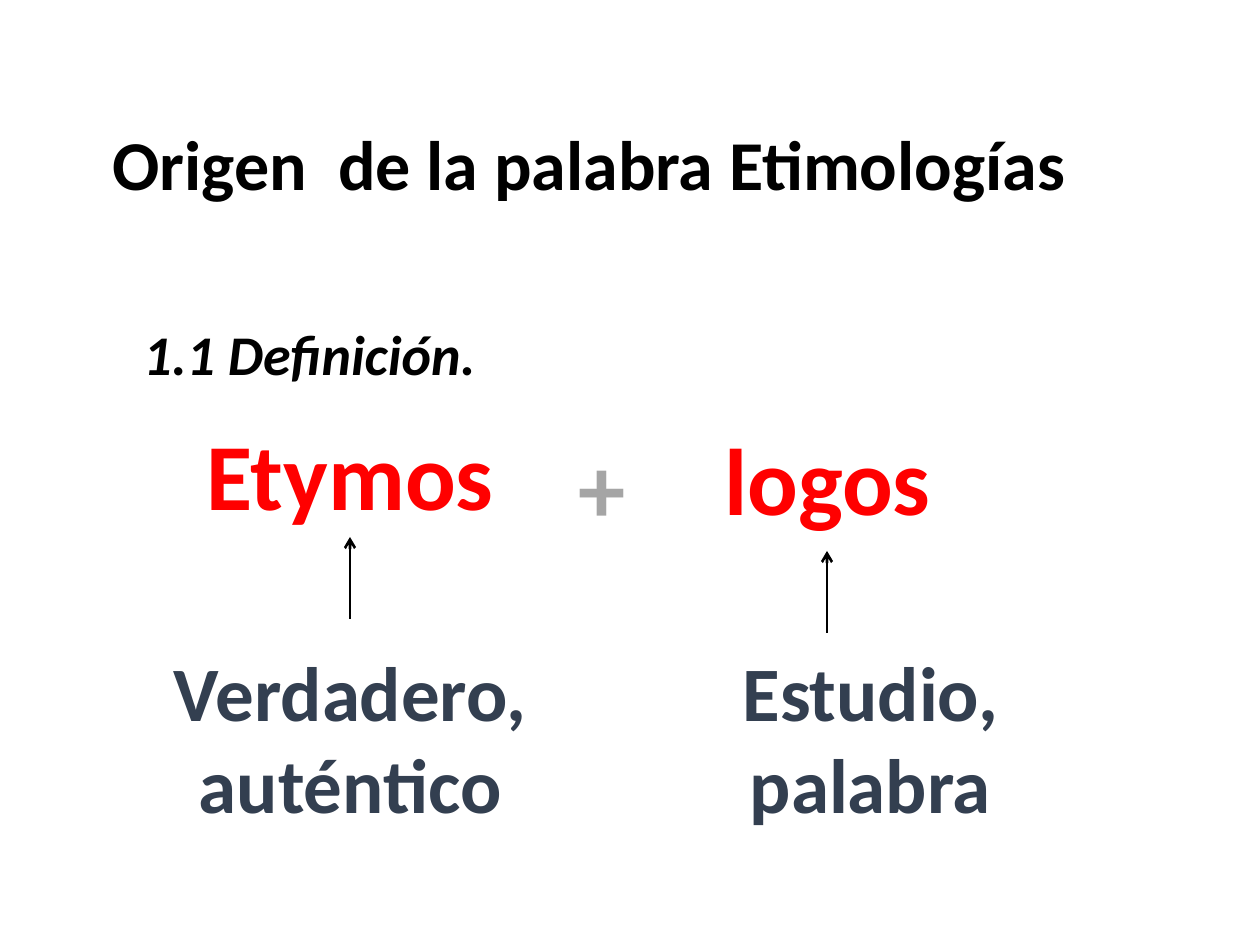
from lxml import etree
from pptx import Presentation
from pptx.dml.color import RGBColor
from pptx.enum.shapes import MSO_CONNECTOR
from pptx.enum.text import MSO_ANCHOR, PP_ALIGN
from pptx.oxml.ns import qn
from pptx.util import Pt

PX = 914400 / 126
FONT = "Calibri"
BLACK = RGBColor(0x00, 0x00, 0x00)
RED = RGBColor(0xFF, 0x00, 0x00)
GRAY = RGBColor(0xA5, 0xA5, 0xA5)
NAVY = RGBColor(0x33, 0x3F, 0x50)
LEFT, CENTER = PP_ALIGN.LEFT, PP_ALIGN.CENTER
TOP, MIDDLE = MSO_ANCHOR.TOP, MSO_ANCHOR.MIDDLE
STRAIGHT = MSO_CONNECTOR.STRAIGHT


def emu(*sizes):
    """Turn px into EMU."""
    return [round(size * PX) for size in sizes]


def label(slide, box, text, size, color, align=CENTER, anchor=TOP,
          wrap=True, italic=False, lines=1.0):
    """Place one bold line of text in a box."""
    frame = slide.shapes.add_textbox(*emu(*box)).text_frame
    frame.word_wrap = wrap
    frame.vertical_anchor = anchor
    frame.text = text
    para = frame.paragraphs[0]
    para.alignment = align
    para.line_spacing = lines
    font = para.runs[0].font
    font.name, font.size, font.bold = FONT, Pt(size), True
    font.italic = italic
    font.color.rgb = color


def arrow(slide, x, top, height):
    """Draw an arrow that points up."""
    line = slide.shapes.add_connector(
        STRAIGHT, *emu(x, top + height, x, top))
    line.line.color.rgb = BLACK
    line.line.width = Pt(1.5)
    tail = etree.SubElement(line.line._get_or_add_ln(), qn("a:tailEnd"))
    tail.set("type", "arrow")
    etree.SubElement(line._element.spPr, qn("a:effectLst"))


def header(slide, box):
    """Place the title and the section name."""
    x, y, w, h = box
    label(slide, box, "Origen  de la palabra Etimologías", 40, BLACK,
          LEFT, MIDDLE, lines=0.9)
    label(slide, (x + 31, y + 250, 499, 69), "1.1 Definición.", 32, BLACK,
          LEFT, italic=True, lines=0.8)


def root(slide, box, word, gap, sense, left):
    """Place a Greek root with an arrow from its meaning."""
    x, y, w, h = box
    label(slide, box, word, 54, RED, wrap=False)
    arrow(slide, x + w // 2, y + h + gap, 82)
    label(slide, (left, 638, 537, 199), sense, 44, NAVY)


def main():
    """Build the slide and save it."""
    deck = Presentation()
    deck.slide_width, deck.slide_height = emu(1260, 945)
    slide = deck.slides.add_slide(deck.slide_layouts[6])
    header(slide, (100, 76, 1086, 183))
    root(slide, (192, 410, 316, 127), "Etymos", 0, "Verdadero, auténtico", 82)
    label(slide, (561, 423, 83, 127), "+", 54, GRAY, wrap=False)
    root(slide, (711, 415, 233, 127), "logos", 9, "Estudio, palabra", 602)
    deck.save("out.pptx")


if __name__ == "__main__":
    main()
